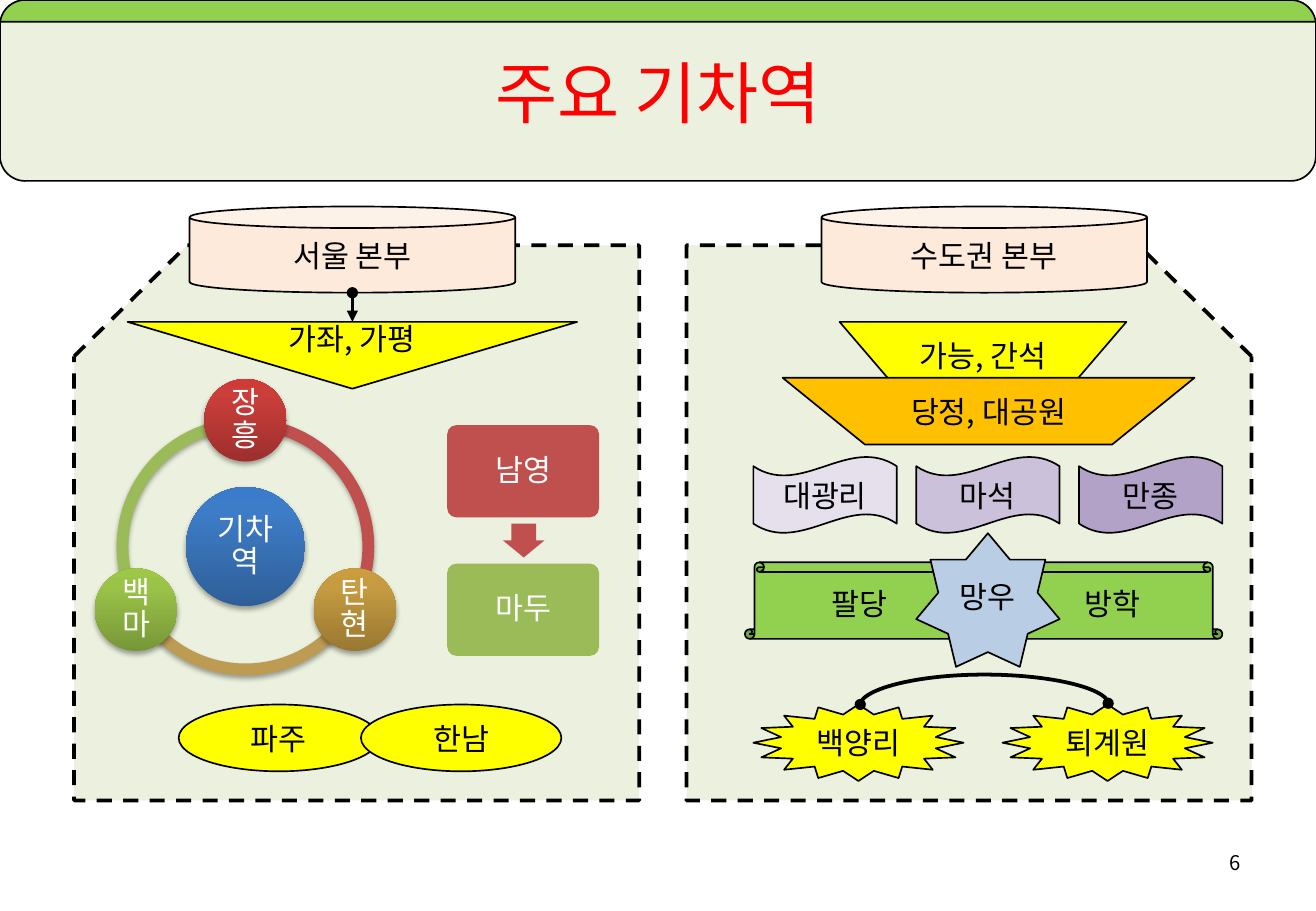
from copy import deepcopy
from dataclasses import dataclass
from math import cos, radians, sin

from lxml.etree import SubElement
from pptx import Presentation
from pptx.dml.color import RGBColor
from pptx.enum.dml import MSO_LINE
from pptx.enum.shapes import MSO_CONNECTOR, MSO_SHAPE
from pptx.enum.text import MSO_ANCHOR, PP_ALIGN
from pptx.oxml.ns import qn
from pptx.util import Inches, Pt


@dataclass(frozen=True)
class Theme:
    """Font, sizes and colours of the slide."""
    font: str = "Noto Sans CJK KR"
    title_size: int = 40
    body_size: int = 18
    number_size: int = 12
    ink: str = "000000"
    paper: str = "FFFFFF"
    title: str = "FF0000"
    band: str = "92D050"
    panel: str = "EBF1DE"
    drum: str = "FDEADA"
    yellow: str = "FFFF00"
    orange: str = "FFC000"
    star: str = "B9CDE5"
    red: str = "C0504D"
    green: str = "9BBB59"
    brown: str = "BD9B53"
    waves: tuple = ("E6E0EC", "CCC1DA", "B3A2C7")
    hub_blend: tuple = ("2F5F99", "3D7CC7", "3A7CCB")
    red_blend: tuple = ("9C2F2D", "CB3E3A", "CE3B37")
    brown_blend: tuple = ("997832", "C79C41", "CB9D3F")
    green_blend: tuple = ("779737", "9BC348", "9DC746")


@dataclass(frozen=True)
class Box:
    """A rectangle on a grid with ten cells to the inch."""
    left: float
    top: float
    width: float
    height: float

    def inner(self, left, top, width, height):
        """Return a box placed relative to this one."""
        return Box(self.left + left, self.top + top, width, height)

    def around(self, x, y, size):
        """Return a square centred on a point of this box."""
        return self.inner(x - size / 2, y - size / 2, size, size)

    def lengths(self):
        """Return left, top, width and height as slide lengths."""
        return [Inches(cells / 10) for cells in (self.left, self.top, self.width, self.height)]


THEME = Theme()


def rgb(code):
    """Turn a hex code into a colour."""
    return RGBColor.from_string(code)


def write(shape, text, size, color, align=PP_ALIGN.CENTER, wrap=False, inset=None, spacing=None):
    """Put one formatted paragraph into a shape."""
    frame = shape.text_frame
    frame.text = text
    frame.word_wrap = wrap
    frame.vertical_anchor = MSO_ANCHOR.MIDDLE
    if inset is not None:
        frame.margin_left = frame.margin_right = Inches(inset)
        frame.margin_top = frame.margin_bottom = Inches(inset)
    para = frame.paragraphs[0]
    para.alignment = align
    if spacing:
        para.line_spacing = spacing
    span = para.runs[0]
    span.font.size = Pt(size)
    span.font.name = THEME.font
    span.font.color.rgb = rgb(color)
    SubElement(span.font._element, qn("a:ea"), typeface=THEME.font)


def add_figure(page, kind, box, fill, line=1, text=None, flip=None, adjust=()):
    """Add a filled preset shape, optionally outlined, flipped and labelled."""
    shape = page.shapes.add_shape(kind, *box.lengths())
    shape.shadow.inherit = False
    shape.fill.solid()
    shape.fill.fore_color.rgb = rgb(fill)
    if line:
        shape.line.color.rgb = rgb(THEME.ink)
        shape.line.width = Pt(line)
    else:
        shape.line.fill.background()
    for index, value in enumerate(adjust):
        shape.adjustments[index] = value
    if flip:
        shape._element.spPr.find(qn("a:xfrm")).set(flip, "1")
    if text:
        write(shape, text, THEME.body_size, THEME.ink)
    return shape


def add_glow(shape):
    """Give a shape a soft shadow below it."""
    effects = shape._element.spPr.find(qn("a:effectLst"))
    shadow = SubElement(effects, qn("a:outerShdw"), blurRad=str(Pt(3.1)), dist=str(Pt(1.8)),
                        dir="5400000", rotWithShape="0")
    color = SubElement(shadow, qn("a:srgbClr"), val=THEME.ink)
    SubElement(color, qn("a:alpha"), val="35000")


def add_ball(page, box, blend, text):
    """Add a shaded circle with a white label."""
    ball = add_figure(page, MSO_SHAPE.OVAL, box, blend[0], line=0)
    ball.fill.gradient()
    ball.fill.gradient_angle = 90
    stops = ball._element.spPr.find(qn("a:gradFill")).find(qn("a:gsLst"))
    stops.append(deepcopy(stops[-1]))
    for stop, color, position in zip(ball.fill.gradient_stops, blend, (0, 0.8, 1)):
        stop.color.rgb = rgb(color)
        stop.position = position
    add_glow(ball)
    write(ball, text, THEME.body_size, THEME.paper, wrap=True, inset=0.03, spacing=0.9)


def add_link(page, kind, start, end, tail):
    """Add a connector that starts with a dot."""
    points = [Inches(cells / 10) for cells in (*start, *end)]
    link = page.shapes.add_connector(kind, *points)
    link.line.color.rgb = rgb(THEME.ink)
    link.line.width = Pt(2.25)
    line = link.line._get_or_add_ln()
    SubElement(line, qn("a:headEnd"), type="oval")
    SubElement(line, qn("a:tailEnd"), type=tail)
    SubElement(link._element.spPr, qn("a:effectLst"))
    return link


def add_header(page, box, text):
    """Add the banded header with the title on it."""
    for top, fill, flip in ((0, THEME.band, None), (1.8, THEME.panel, "flipV")):
        add_figure(page, MSO_SHAPE.ROUND_2_SAME_RECTANGLE, box.inner(0, top, box.width, 13.1),
                   fill, flip=flip, adjust=(0.158, 0))
    title = page.shapes.title
    title.left, title.top, title.width, title.height = box.inner(5.4, 1.3, 97.5, 12.5).lengths()
    write(title, text, THEME.title_size, THEME.title, wrap=True)
    page.shapes._spTree.append(title._element)


def add_panel(page, box, drum_left, text, flip=None):
    """Add a dashed card with a drum-shaped heading."""
    card = add_figure(page, MSO_SHAPE.FLOWCHART_CARD, box, THEME.panel, line=2.25, flip=flip)
    card.line.dash_style = MSO_LINE.DASH
    add_figure(page, MSO_SHAPE.CAN, box.inner(drum_left, -3.2, 26.8, 7.1), THEME.drum, text=text)


def add_cycle(page, box):
    """Add the ring of three stations around a hub."""
    middle = box.width / 2
    stations = (("장흥", 270, THEME.red, THEME.red_blend),
                ("탄현", 30, THEME.brown, THEME.brown_blend),
                ("백마", 150, THEME.green, THEME.green_blend))
    for _, angle, color, _ in reversed(stations):
        end = (angle + 120) % 360
        arc = add_figure(page, MSO_SHAPE.BLOCK_ARC, box, color, line=0,
                         adjust=(angle * 0.6, end * 0.6, 0.046))
        add_glow(arc)
    add_ball(page, box.around(middle, middle, 9.8), THEME.hub_blend, "기차역")
    for name, angle, _, blend in stations:
        x = middle + 10.4 * cos(radians(angle))
        y = middle + 10.4 * sin(radians(angle))
        add_ball(page, box.around(x, y, 6.8), blend, name)


def add_steps(page, box):
    """Add two stacked blocks joined by a block arrow."""
    for row, (name, color) in enumerate((("남영", THEME.red), ("마두", THEME.green))):
        block = add_figure(page, MSO_SHAPE.ROUNDED_RECTANGLE, box.inner(0, 11.4 * row, box.width, 7.6),
                           color, line=0, adjust=(0.1,))
        write(block, name, THEME.body_size, THEME.paper, wrap=True, inset=0.07, spacing=0.9)
    add_figure(page, MSO_SHAPE.DOWN_ARROW, box.inner(4.6, 8.1, 3.4, 2.8), THEME.red, line=0,
               adjust=(0.6, 0.5))


def add_seoul(page, box):
    """Fill the left panel."""
    add_panel(page, box, 9.5, "서울 본부")
    add_figure(page, MSO_SHAPE.FLOWCHART_MERGE, box.inner(4.4, 6.3, 37, 5.5), THEME.yellow,
               text="가좌, 가평")
    x = box.left + 22.9
    add_link(page, MSO_CONNECTOR.STRAIGHT, (x, box.top + 3.9), (x, box.top + 6.3), "triangle")
    add_cycle(page, box.inner(3.5, 14.2, 21.2, 21.2))
    add_steps(page, box.inner(30.7, 14.8, 12.5, 19))
    for column, name in enumerate(("파주", "한남")):
        add_figure(page, MSO_SHAPE.OVAL, box.inner(8.6 + 15 * column, 37.8, 16.5, 5.5),
                   THEME.yellow, text=name)


def add_capital(page, box):
    """Fill the right panel."""
    add_panel(page, box, 11.1, "수도권 본부", flip="flipH")
    funnels = (("가능, 간석", 12.6, 6.3, 23.6, THEME.yellow),
               ("당정, 대공원", 7.9, 10.9, 33.9, THEME.orange))
    for name, left, top, width, color in funnels:
        add_figure(page, MSO_SHAPE.FLOWCHART_MANUAL_OPERATION, box.inner(left, top, width, 5.5),
                   color, text=name)
    for column, (name, color) in enumerate(zip(("대광리", "마석", "만종"), THEME.waves)):
        add_figure(page, MSO_SHAPE.WAVE, box.inner(5.5 + 13.4 * column, 17.4, 11.8, 6.3), color,
                   text=name, flip="flipH")
    for name, left, width, flip in (("팔당", 4.8, 18.9, None), ("방학", 26, 18.1, "flipH")):
        add_figure(page, MSO_SHAPE.VERTICAL_SCROLL, box.inner(left, 26.1, width, 6.3), THEME.band,
                   text=name, flip=flip)
    add_figure(page, MSO_SHAPE.STAR_7_POINT, box.inner(18.9, 23.7, 11.8, 11), THEME.star, text="망우")
    for name, left in (("백양리", 5.5), ("퇴계원", 26)):
        add_figure(page, MSO_SHAPE.STAR_16_POINT, box.inner(left, 37.8, 17.3, 6.3), THEME.yellow,
                   text=name)
    x, y = box.left + 24.5, box.top + 37.75
    arch = add_link(page, MSO_CONNECTOR.CURVE, (x + 0.05, y + 10.2), (x - 0.05, y - 10.2), "oval")
    arch._element.spPr.find(qn("a:xfrm")).set("rot", "5400000")
    guides = arch._element.spPr.find(qn("a:prstGeom")).find(qn("a:avLst"))
    SubElement(guides, qn("a:gd"), name="adj1", fmla="val 2500000")


def add_number(page, box, text):
    """Add the page number."""
    number = page.shapes.add_textbox(*box.lengths())
    write(number, text, THEME.number_size, THEME.ink, align=PP_ALIGN.RIGHT, wrap=True)


def main():
    """Build and save the deck."""
    deck = Presentation()
    deck.slide_width, deck.slide_height = Inches(10.83), Inches(7.5)
    page = deck.slides.add_slide(deck.slide_layouts[5])
    sheet = Box(0, 0, 108.3, 75)
    add_header(page, sheet.inner(0, 0, sheet.width, 14.9), "주요 기차역")
    add_seoul(page, sheet.inner(6.1, 20.2, 46.5, 45.7))
    add_capital(page, sheet.inner(56.5, 20.2, 46.5, 45.7))
    add_number(page, sheet.inner(77.8, 69, 25.3, 4), "6")
    deck.save("out.pptx")


if __name__ == "__main__":
    main()
